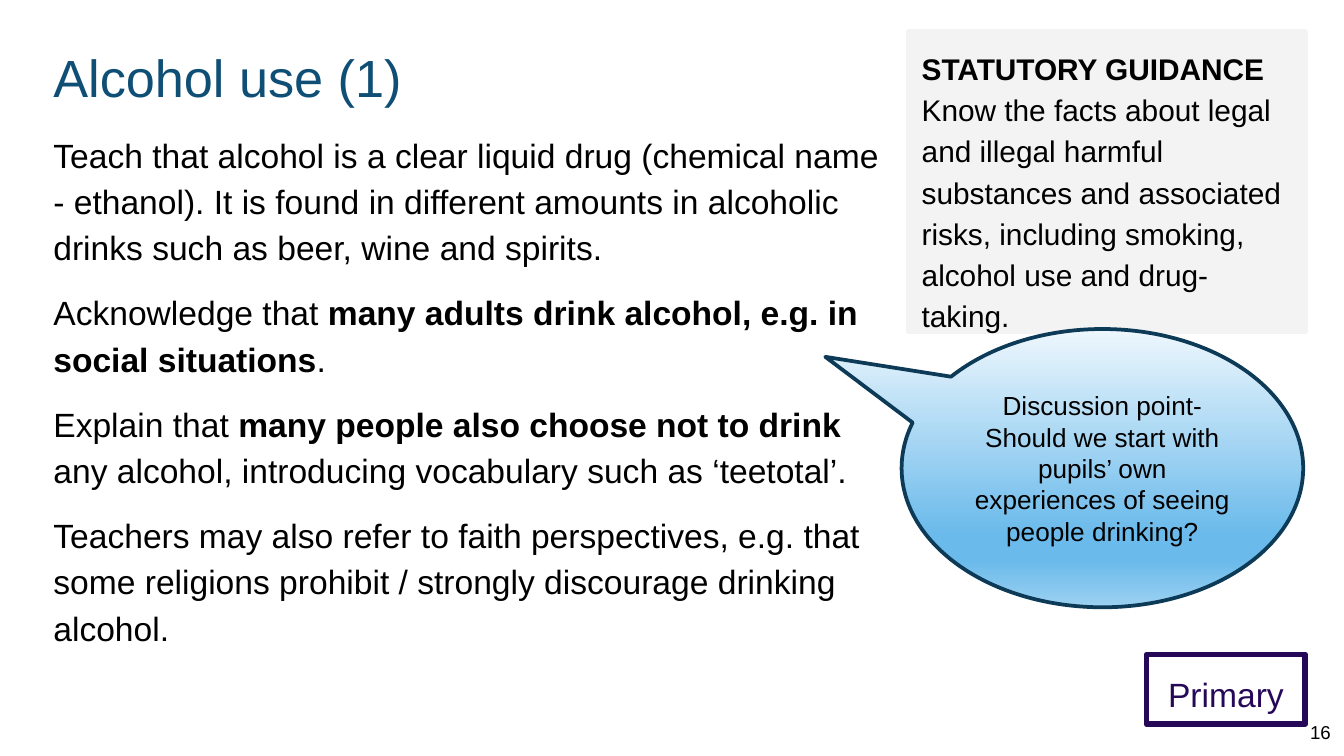
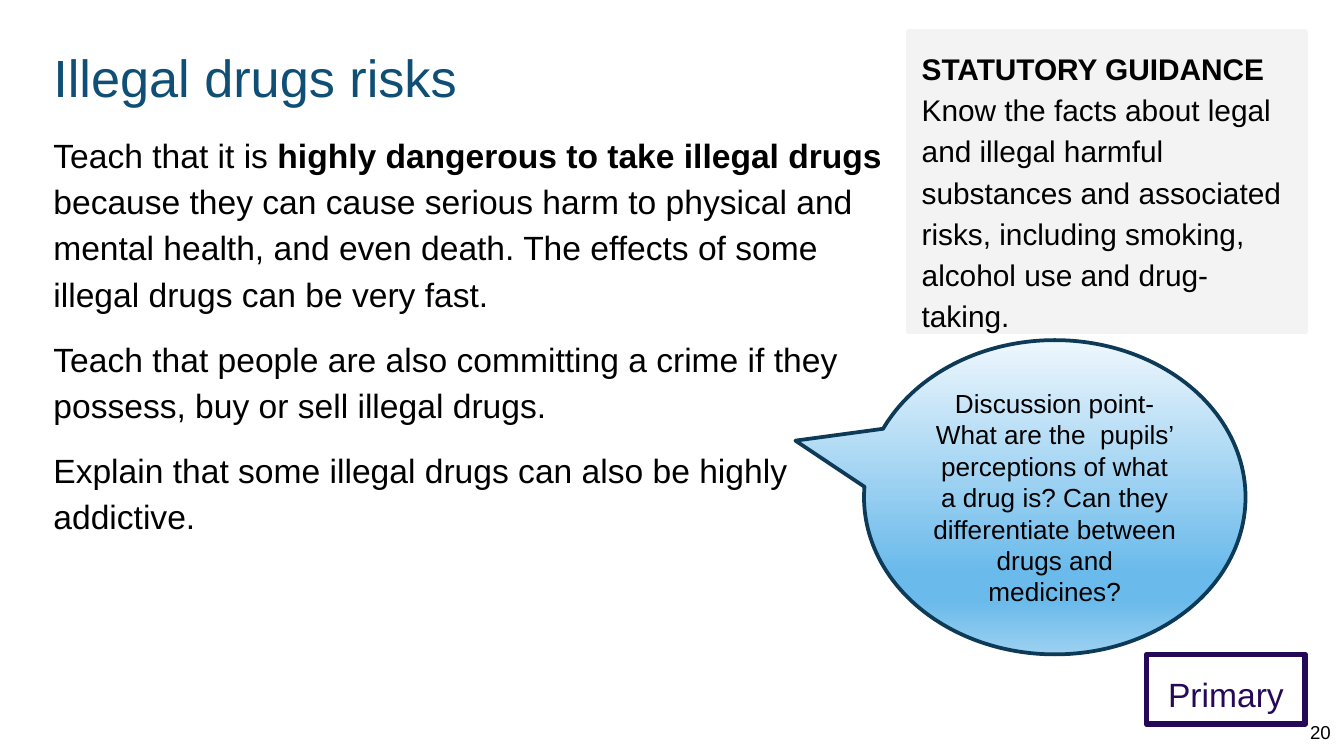
from copy import deepcopy
from dataclasses import dataclass
from typing import NamedTuple

from lxml.etree import SubElement
from pptx import Presentation
from pptx.dml.color import RGBColor as Rgb
from pptx.enum.shapes import MSO_SHAPE as Kind
from pptx.enum.text import MSO_ANCHOR as Anchor, PP_ALIGN as Align
from pptx.oxml.ns import qn
from pptx.util import Cm, Pt

FONT = "Arial"
HUES = {
    "text": "000000",
    "title": "104F75",
    "badge": "260859",
    "panel": "F3F3F3",
    "edge": "0C3A57",
}
# Callout gradient: position in percent, colour
STOPS = [(0, "EEF7FD"), (74, "6ABAEB"), (83, "6ABAEB"), (100, "9CD1F1")]


class Rect(NamedTuple):
    left: float
    top: float
    width: float
    height: float

    def cm(self) -> list:
        return [Cm(side) for side in self]


@dataclass
class Style:
    size: int
    hue: str = "text"
    align: Align = Align.LEFT
    anchor: Anchor = Anchor.TOP
    lead: float = 1.0
    inset: float = 0.25  # top and bottom margin


@dataclass
class Bubble:
    rect: Rect
    tip: tuple[float, float]
    text: str


@dataclass
class Page:
    title: str
    body: list[str]  # bold words stand between asterisks
    bubble: Bubble
    number: int


# Shared frames and text styles
TITLE = Rect(0.76, 0.61, 16.28, 1.6)
BODY = Rect(0.76, 2.18, 16.28, 10.19)
PANEL = Rect(17.17, 0.61, 7.49, 5.66)
BADGE = Rect(21.67, 12.37, 3, 1.32)
NUMBER = Rect(24.41, 13.36, 0.99, 0.94)

HEAD = Style(28, "title")
PROSE = Style(18, lead=1.15)
NOTE = Style(16, lead=1.15)
LABEL = Style(18, "badge", Align.CENTER, lead=1.15)
FOLIO = Style(10, align=Align.RIGHT, anchor=Anchor.MIDDLE)
TALK = Style(14, align=Align.CENTER, anchor=Anchor.MIDDLE, inset=0.13)

GUIDE = (
    "STATUTORY GUIDANCE\vKnow the facts about legal and illegal harmful "
    "substances and associated risks, including smoking, alcohol use and "
    "drug-taking."
)

PAGES = [
    Page(
        "Alcohol use (1)",
        [
            "Teach that alcohol is a clear liquid drug (chemical name - ethanol). "
            "It is found in different amounts in alcoholic drinks such as beer, "
            "wine and spirits.",
            "Acknowledge that *many adults drink alcohol, e.g. in social situations*.",
            "Explain that *many people also choose not to drink* any alcohol, "
            "introducing vocabulary such as ‘teetotal’.",
            "Teachers may also refer to faith perspectives, e.g. that some "
            "religions prohibit / strongly discourage drinking alcohol.",
        ],
        Bubble(
            Rect(17.04, 6.22, 7.59, 5.26),
            (-0.69, -0.4),
            "Discussion point- Should we start with pupils’ own experiences "
            "of seeing people drinking?",
        ),
        16,
    ),
    Page(
        "Illegal drugs risks",
        [
            "Teach that it is *highly dangerous to take illegal drugs* because "
            "they can cause serious harm to physical and mental health, and even "
            "death. The effects of some illegal drugs can be very fast.",
            "Teach that people are also committing a crime if they possess, buy "
            "or sell illegal drugs.",
            "Explain that some illegal drugs can also be highly addictive.",
        ],
        Bubble(
            Rect(16.33, 6.43, 7.21, 5.94),
            (-0.68, -0.18),
            "Discussion point- What are the  pupils’ perceptions of what a drug "
            "is? Can they differentiate between drugs and medicines?",
        ),
        20,
    ),
]


def write(shape, lines: list[str], style: Style) -> None:
    """Fill a shape with styled paragraphs."""
    frame = shape.text_frame
    frame.word_wrap = True
    frame.vertical_anchor = style.anchor
    frame.margin_left = frame.margin_right = Cm(0.25)
    frame.margin_top = frame.margin_bottom = Cm(style.inset)
    for i, line in enumerate(lines):
        para = frame.add_paragraph() if i else frame.paragraphs[0]
        para.alignment = style.align
        para.line_spacing = style.lead
        para.space_before = Pt(10 if i else 0)
        first, *rest = line.split("*")
        para.text = first
        for j, part in enumerate(rest):
            run = para.add_run()
            run.text = part
            run.font.bold = j % 2 == 0
        for run in para.runs:
            run.font.name = FONT
            run.font.size = Pt(style.size)
            run.font.color.rgb = Rgb.from_string(HUES[style.hue])
        # Line breaks take the size of the text around them
        for gap in para._p.findall(qn("a:br")):
            gap.insert(0, deepcopy(para.runs[0]._r.rPr))


def label(slide, rect: Rect, lines: list[str], style: Style) -> None:
    write(slide.shapes.add_textbox(*rect.cm()), lines, style)


def outline(shape, hue: str, width: float) -> None:
    shape.shadow.inherit = False
    shape.line.color.rgb = Rgb.from_string(HUES[hue])
    shape.line.width = Pt(width)


def block(slide, rect: Rect, edge: str, fill: str | None = None):
    """Draw a rectangle with a thick, rounded outline."""
    shape = slide.shapes.add_shape(Kind.RECTANGLE, *rect.cm())
    outline(shape, edge, 3)
    SubElement(shape.line._get_or_add_ln(), qn("a:round"))
    if fill:
        shape.fill.solid()
        shape.fill.fore_color.rgb = Rgb.from_string(HUES[fill])
    else:
        shape.fill.background()
    return shape


def speak(slide, talk: Bubble) -> None:
    """Draw the discussion callout."""
    shape = slide.shapes.add_shape(Kind.OVAL_CALLOUT, *talk.rect.cm())
    shape.adjustments[0], shape.adjustments[1] = talk.tip
    shape.fill.gradient()
    shape.fill.gradient_angle = 270
    stops = shape._element.spPr.find(".//" + qn("a:gsLst"))
    for old in list(stops):
        stops.remove(old)
    for spot, hue in STOPS:
        stop = SubElement(stops, qn("a:gs"), pos=str(spot * 1000))
        SubElement(stop, qn("a:srgbClr"), val=hue)
    outline(shape, "edge", 2)
    write(shape, [talk.text], TALK)


def build(deck, page: Page) -> None:
    slide = deck.slides.add_slide(deck.slide_layouts[6])
    label(slide, TITLE, [page.title], HEAD)
    write(block(slide, BADGE, "badge"), ["Primary"], LABEL)
    label(slide, BODY, page.body, PROSE)
    label(slide, NUMBER, [str(page.number)], FOLIO)
    # Guidance panel with a bold heading
    panel = block(slide, PANEL, "panel", "panel")
    write(panel, [GUIDE], NOTE)
    panel.text_frame.paragraphs[0].runs[0].font.bold = True
    speak(slide, page.bubble)


def main() -> None:
    deck = Presentation()
    deck.slide_width, deck.slide_height = Cm(25.4), Cm(14.29)
    for page in PAGES:
        build(deck, page)
    deck.save("out.pptx")


if __name__ == "__main__":
    main()
